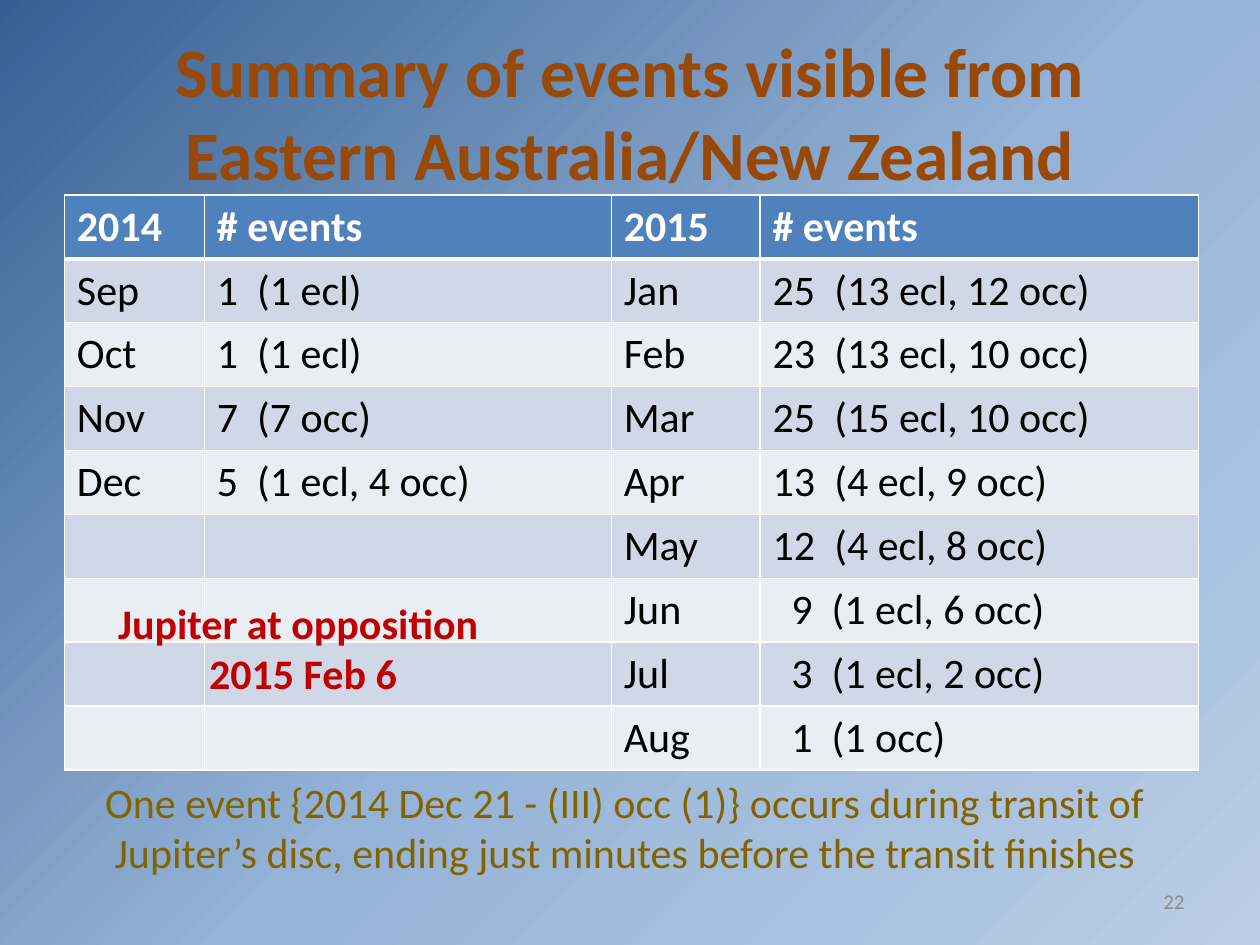
from dataclasses import dataclass

from lxml.etree import SubElement
from pptx import Presentation
from pptx.dml.color import RGBColor
from pptx.enum.text import MSO_ANCHOR, MSO_AUTO_SIZE, PP_ALIGN
from pptx.oxml.ns import qn
from pptx.util import Pt


@dataclass(frozen=True)
class Theme:
    font: str = "Calibri"
    title_size: float = 39.6
    body_size: float = 24
    number_size: float = 12
    title: str = "984807"
    header: str = "4F81BD"
    bands: tuple = ("D0D8E8", "E9EDF4")
    white: str = "FFFFFF"
    black: str = "000000"
    note: str = "826300"
    opposition: str = "C00000"
    number: str = "8C8C8C"
    background: tuple = ((0, "376092"), (53, "95B3D7"), (100, "B9CDE5"))


THEME = Theme()
COLUMN_WIDTHS = (80, 232.5, 85, 250.5)
ROW_HEIGHT = 34.56
DETAIL_TABS = {1: 23, 2: 35.3}  # keyed by number of digits in the count
DIGIT_INDENT = 10.8

HEADER = ("2014", "# events", "2015", "# events")
EVENTS_2014 = (
    ("Sep", 1, "1 ecl"),
    ("Oct", 1, "1 ecl"),
    ("Nov", 7, "7 occ"),
    ("Dec", 5, "1 ecl, 4 occ"),
)
EVENTS_2015 = (
    ("Jan", 25, "13 ecl, 12 occ"),
    ("Feb", 23, "13 ecl, 10 occ"),
    ("Mar", 25, "15 ecl, 10 occ"),
    ("Apr", 13, "4 ecl, 9 occ"),
    ("May", 12, "4 ecl, 8 occ"),
    ("Jun", 9, "1 ecl, 6 occ"),
    ("Jul", 3, "1 ecl, 2 occ"),
    ("Aug", 1, "1 occ"),
)


def paint_background(slide):
    fill = slide.background.fill
    fill.gradient()
    fill.gradient_angle = 315
    stops = slide.element.find(".//" + qn("a:gsLst"))
    for stop in list(stops):
        stops.remove(stop)
    for position, color in THEME.background:
        stop = SubElement(stops, qn("a:gs"), pos=str(position * 1000))
        SubElement(stop, qn("a:srgbClr"), val=color)


def format_text(frame, size, color, bold=False, align=PP_ALIGN.LEFT):
    for para in frame.paragraphs:
        para.alignment = align
        for span in para.runs:
            span.font.name = THEME.font
            span.font.size = Pt(size)
            span.font.bold = bold
            span.font.color.rgb = RGBColor.from_string(color)


def place(shape, left, top, width, height):
    shape.left, shape.top = Pt(left), Pt(top)
    shape.width, shape.height = Pt(width), Pt(height)


def add_title(slide, text, bounds):
    title = slide.shapes.title
    place(title, *bounds)
    frame = title.text_frame
    frame.text = text
    frame.auto_size = MSO_AUTO_SIZE.NONE
    frame.vertical_anchor = MSO_ANCHOR.MIDDLE
    format_text(frame, THEME.title_size, THEME.title, True, PP_ALIGN.CENTER)


def add_text(slide, text, bounds, size, color, bold=False,
             align=PP_ALIGN.CENTER, anchor=MSO_ANCHOR.TOP):
    box = slide.shapes.add_textbox(*map(Pt, bounds))
    frame = box.text_frame
    frame.word_wrap = True
    frame.vertical_anchor = anchor
    frame.text = text
    format_text(frame, size, color, bold, align)


def border_cell(cell, top, bottom):
    properties = cell._tc.get_or_add_tcPr()
    for side, width in (("L", 1), ("R", 1), ("T", top), ("B", bottom)):
        line = SubElement(properties, qn("a:ln" + side), w=str(Pt(width)))
        fill = SubElement(line, qn("a:solidFill"))
        SubElement(fill, qn("a:srgbClr"), val=THEME.white)


def fill_cell(cell, row, text):
    is_header = row == 0
    border_cell(cell, 3 if row == 1 else 1, 3 if is_header else 1)
    color = THEME.header if is_header else THEME.bands[(row - 1) % 2]
    cell.fill.solid()
    cell.fill.fore_color.rgb = RGBColor.from_string(color)
    cell.text_frame.text = text
    format_text(cell.text_frame, THEME.body_size,
                THEME.white if is_header else THEME.black, is_header)


def set_detail_tab(cell, position):
    properties = cell.text_frame.paragraphs[0]._p.get_or_add_pPr()
    tabs = SubElement(properties, qn("a:tabLst"))
    SubElement(tabs, qn("a:tab"), pos=str(Pt(position)), algn="l")


def add_events_table(slide, left, top):
    row_count = max(len(EVENTS_2014), len(EVENTS_2015)) + 1
    frame = slide.shapes.add_table(
        row_count, len(COLUMN_WIDTHS), Pt(left), Pt(top),
        Pt(sum(COLUMN_WIDTHS)), Pt(ROW_HEIGHT * row_count))
    table = frame.table
    for column, width in zip(table.columns, COLUMN_WIDTHS):
        column.width = Pt(width)
    for row in table.rows:
        row.height = Pt(ROW_HEIGHT)
    for column, text in enumerate(HEADER):
        fill_cell(table.cell(0, column), 0, text)

    # One month and events column pair per year
    for first_column, events in ((0, EVENTS_2014), (2, EVENTS_2015)):
        widest = max(len(str(count)) for _, count, _ in events)
        for row in range(1, row_count):
            month_cell = table.cell(row, first_column)
            events_cell = table.cell(row, first_column + 1)
            if row > len(events):
                fill_cell(month_cell, row, "")
                fill_cell(events_cell, row, "")
                continue
            month, count, detail = events[row - 1]
            digits = len(str(count))
            fill_cell(month_cell, row, month)
            fill_cell(events_cell, row, f"{count}\t({detail})")
            set_detail_tab(events_cell, DETAIL_TABS[digits])
            events_cell.margin_left = Pt(7.2 + DIGIT_INDENT * (widest - digits))


def main():
    deck = Presentation()
    deck.slide_width, deck.slide_height = Pt(720), Pt(540)
    slide = deck.slides.add_slide(deck.slide_layouts[5])
    paint_background(slide)

    # Title and table
    add_title(slide, "Summary of events visible from Eastern Australia/New Zealand",
              (36, 21.6, 648, 84))
    add_events_table(slide, 36.8, 111.4)

    # Notes below and over the table
    add_text(slide,
             "One event {2014 Dec 21 - (III) occ (1)} occurs during transit of "
             "Jupiter’s disc, ending just minutes before the transit finishes",
             (31, 440, 652, 65.5), THEME.body_size, THEME.note)
    add_text(slide, "Jupiter at opposition \n2015 Feb 6", (54, 337.7, 238.3, 65.5),
             THEME.body_size, THEME.opposition, bold=True)

    # Page number
    add_text(slide, "22", (516, 500.5, 168, 28.8), THEME.number_size, THEME.number,
             align=PP_ALIGN.RIGHT, anchor=MSO_ANCHOR.MIDDLE)
    deck.save("out.pptx")


if __name__ == "__main__":
    main()
